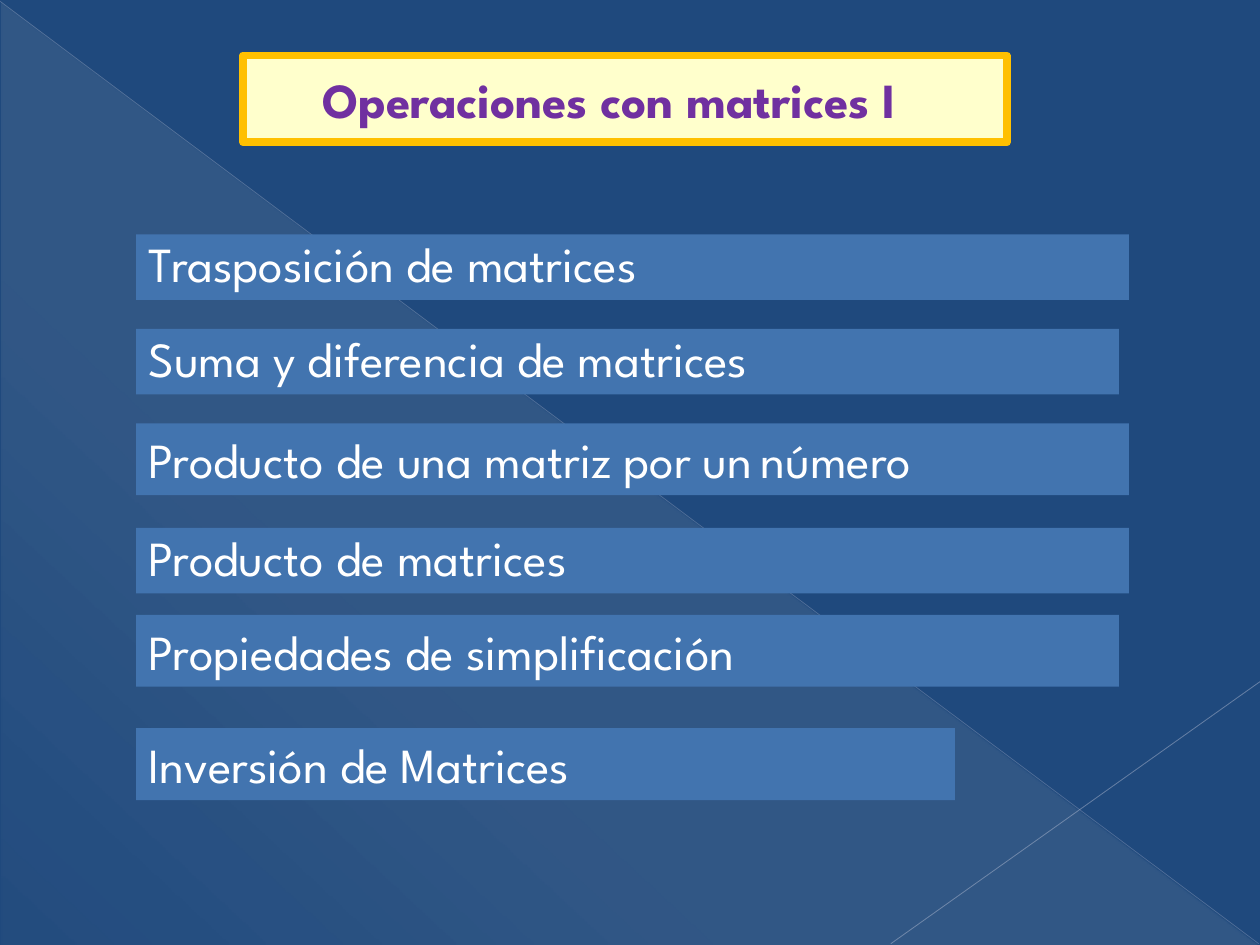
from lxml.etree import SubElement
from pptx import Presentation
from pptx.dml.color import RGBColor
from pptx.enum.shapes import MSO_CONNECTOR, MSO_SHAPE
from pptx.enum.text import MSO_ANCHOR, MSO_AUTO_SIZE, PP_ALIGN
from pptx.oxml import parse_xml
from pptx.oxml.ns import nsdecls, qn
from pptx.util import Inches, Pt

FONT = "League Spartan"
NAVY = RGBColor(0x1F, 0x49, 0x7D)
BLUE = RGBColor(0x42, 0x74, 0xAF)
CREAM = RGBColor(0xFF, 0xFF, 0xCC)
GOLD = RGBColor(0xFF, 0xC0, 0x00)
PURPLE = RGBColor(0x70, 0x30, 0xA0)
WHITE = RGBColor(0xFF, 0xFF, 0xFF)
IVORY = RGBColor(0xEE, 0xEC, 0xE1)
OUTLINE = RGBColor(0x37, 0x59, 0x83)
PALE = RGBColor(0xAD, 0xB6, 0xCE)
PALER = RGBColor(0xB6, 0xBE, 0xD3)

WIDTH, HEIGHT = 10, 7.5
LEFT = 1.08
WIDE, MEDIUM, NARROW = 7.88, 7.8, 6.5
TIGHT, LOOSE = (0.52, 0.9), (0.57, 1.0)

TITLE = "Operaciones con matrices I"
TOPICS = [
    ([("Trasposición de matrices", 28)], 1.86, WIDE, TIGHT),
    ([("Suma y diferencia de matrices", 28)], 2.61, MEDIUM, TIGHT),
    ([("Producto de una matriz por un", 28), (" ", 18), ("número", 28)], 3.36, WIDE, LOOSE),
    ([("Producto de matrices", 28)], 4.19, WIDE, TIGHT),
    ([("Propiedades de simplificación", 28)], 4.88, MEDIUM, LOOSE),
    ([("Inversión de Matrices", 28)], 5.78, NARROW, LOOSE),
]
DIAGONALS = [
    ((0, 0.01), (9.99, 7.49), PALE, 0.39, 35),
    ((10, 5.41), (7.07, 7.49), PALER, 0.47, 45),
]
GLOW = [(0, 10), (70, 8), (100, 1)]


def add_block(slide, kind, left, top, width, height, color=None):
    block = slide.shapes.add_shape(kind, *map(Inches, (left, top, width, height)))
    block.shadow.inherit = False
    block.line.fill.background()
    if color is not None:
        block.fill.solid()
        block.fill.fore_color.rgb = color
    return block


def write(block, pieces, color=WHITE, bold=False, anchor=MSO_ANCHOR.TOP,
          line_spacing=1.0, space_before=0):
    frame = block.text_frame
    frame.word_wrap = True
    frame.vertical_anchor = anchor
    paragraph = frame.paragraphs[0]
    paragraph.alignment = PP_ALIGN.LEFT
    paragraph.line_spacing = line_spacing
    paragraph.space_before = Pt(space_before)
    for text, size in pieces:
        run = paragraph.add_run()
        run.text = text
        run.font.name = FONT
        run.font.size = Pt(size)
        run.font.bold = bold
        run.font.color.rgb = color
    return paragraph


def add_glow(slide):
    triangle = add_block(slide, MSO_SHAPE.RIGHT_TRIANGLE, 0.01, 0.02, 9.98, 7.48)
    stops = "".join(
        f'<a:gs pos="{place * 1000}"><a:srgbClr val="{IVORY}">'
        f'<a:alpha val="{opacity * 1000}"/></a:srgbClr></a:gs>'
        for place, opacity in GLOW
    )
    gradient = parse_xml(
        f'<a:gradFill {nsdecls("a")} rotWithShape="1"><a:gsLst>{stops}</a:gsLst>'
        f'<a:lin ang="{133 * 60000}" scaled="0"/></a:gradFill>'
    )
    triangle._element.spPr.find(qn("a:prstGeom")).addnext(gradient)


def add_diagonal(slide, start, end, color, weight, opacity):
    diagonal = slide.shapes.add_connector(
        MSO_CONNECTOR.STRAIGHT, *map(Inches, start + end))
    diagonal.line.color.rgb = color
    diagonal.line.width = Pt(weight)
    properties = diagonal._element.spPr
    tint = next(properties.iter(qn("a:srgbClr")))
    SubElement(tint, qn("a:alpha"), val=str(opacity * 1000))
    SubElement(properties, qn("a:effectLst"))


def add_title(slide):
    title = add_block(slide, MSO_SHAPE.RECTANGLE, 1.93, 0.44, 6.06, 0.69, CREAM)
    title.line.color.rgb = GOLD
    title.line.width = Pt(4.5)
    SubElement(title._element.spPr.find(qn("a:ln")), qn("a:round"))
    heading = write(title, [(TITLE, 28)], color=PURPLE, bold=True,
                    anchor=MSO_ANCHOR.MIDDLE)
    indent = heading._p.get_or_add_pPr()
    indent.set("marL", str(Inches(0.53)))
    indent.set("indent", "0")
    heading.runs[0]._r.get_or_add_rPr().insert(0, parse_xml(
        f'<a:ln {nsdecls("a")} w="{Pt(0.5)}"><a:solidFill>'
        f'<a:srgbClr val="{OUTLINE}"/></a:solidFill></a:ln>'))


def main():
    deck = Presentation()
    deck.slide_width, deck.slide_height = Inches(WIDTH), Inches(HEIGHT)
    slide = deck.slides.add_slide(deck.slide_layouts[6])
    slide.background.fill.solid()
    slide.background.fill.fore_color.rgb = NAVY
    add_glow(slide)
    for diagonal in DIAGONALS:
        add_diagonal(slide, *diagonal)
    add_title(slide)
    for pieces, top, width, (height, spacing) in TOPICS:
        topic = add_block(slide, MSO_SHAPE.RECTANGLE, LEFT, top, width, height, BLUE)
        write(topic, pieces, line_spacing=spacing, space_before=5.6)
        topic.text_frame.auto_size = MSO_AUTO_SIZE.SHAPE_TO_FIT_TEXT
    deck.save("out.pptx")


if __name__ == "__main__":
    main()
